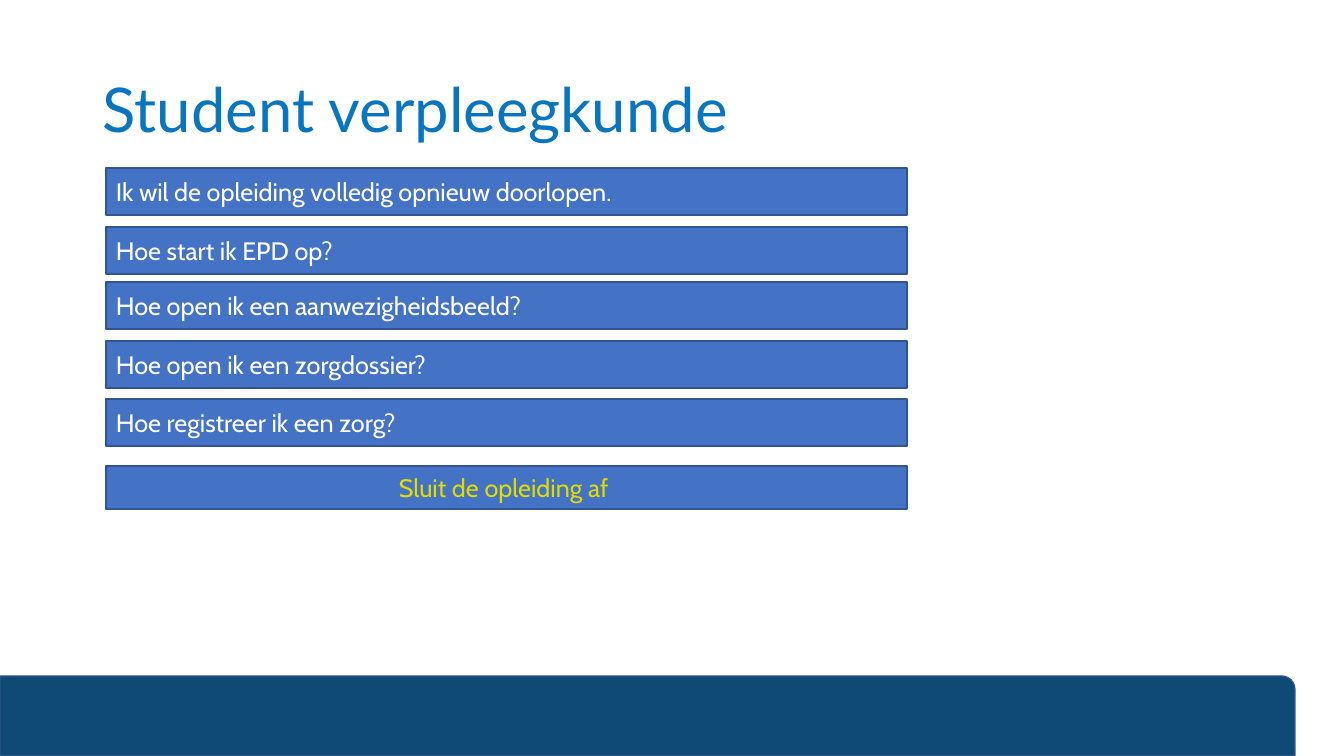
from pptx import Presentation
from pptx.dml.color import RGBColor
from pptx.enum.shapes import MSO_SHAPE as Shape
from pptx.enum.text import MSO_ANCHOR as Anchor, PP_ALIGN as Align
from pptx.util import Pt

EMU_PER_PX = 914400 / 100.8
COLORS = {
    "title": "0875BE",
    "button": "4472C4",
    "border": "325491",
    "footer": "0E4A73",
    "question": "FFFFFF",
    "finish": "DEDC00",
}
BUTTON_LEFT, BUTTON_WIDTH = 106, 801
QUESTION_HEIGHT, FINISH_HEIGHT = 47, 43
QUESTIONS = [
    (168, "Ik wil de opleiding volledig opnieuw doorlopen."),
    (227, "Hoe start ik EPD op?"),
    (282, "Hoe open ik een aanwezigheidsbeeld?"),
    (341, "Hoe open ik een zorgdossier?"),
    (399, "Hoe registreer ik een zorg?"),
]


def px(*lengths):
    return [round(length * EMU_PER_PX) for length in lengths]


def color(name):
    return RGBColor.from_string(COLORS[name])


def write_text(shape, text, font_name, size, color_name, align=Align.LEFT):
    frame = shape.text_frame
    frame.word_wrap = True
    frame.vertical_anchor = Anchor.MIDDLE
    paragraph = frame.paragraphs[0]
    paragraph.text = text
    paragraph.alignment = align
    font = paragraph.font
    font.name, font.size = font_name, Pt(size)
    font.color.rgb = color(color_name)
    return paragraph


def add_panel(slide, kind, box, fill):
    shape = slide.shapes.add_shape(kind, *px(*box))
    shape.shadow.inherit = False
    shape.fill.solid()
    shape.fill.fore_color.rgb = color(fill)
    shape.line.color.rgb = color("border")
    shape.line.width = Pt(1)
    return shape


def add_title(slide, text):
    shape = slide.shapes.add_textbox(*px(93, 40, 1159, 146))
    write_text(shape, text, "Lato", 44, "title").line_spacing = 0.9


def add_button(slide, top, height, text, color_name, align=Align.LEFT):
    box = (BUTTON_LEFT, top, BUTTON_WIDTH, height)
    shape = add_panel(slide, Shape.ACTION_BUTTON_CUSTOM, box, "button")
    write_text(shape, text, "Cabin", 18, color_name, align)


def main():
    presentation = Presentation()
    presentation.slide_width, presentation.slide_height = px(1344, 756)
    slide = presentation.slides.add_slide(presentation.slide_layouts[6])

    # Footer bar and title
    add_panel(slide, Shape.ROUND_1_RECTANGLE, (0, 676, 1295, 80), "footer")
    add_title(slide, "Student verpleegkunde")

    # Question buttons
    for top, question in QUESTIONS:
        add_button(slide, top, QUESTION_HEIGHT, question, "question")

    # Closing button
    add_button(slide, 466, FINISH_HEIGHT, "Sluit de opleiding af ", "finish", Align.CENTER)

    presentation.save("out.pptx")


if __name__ == "__main__":
    main()
